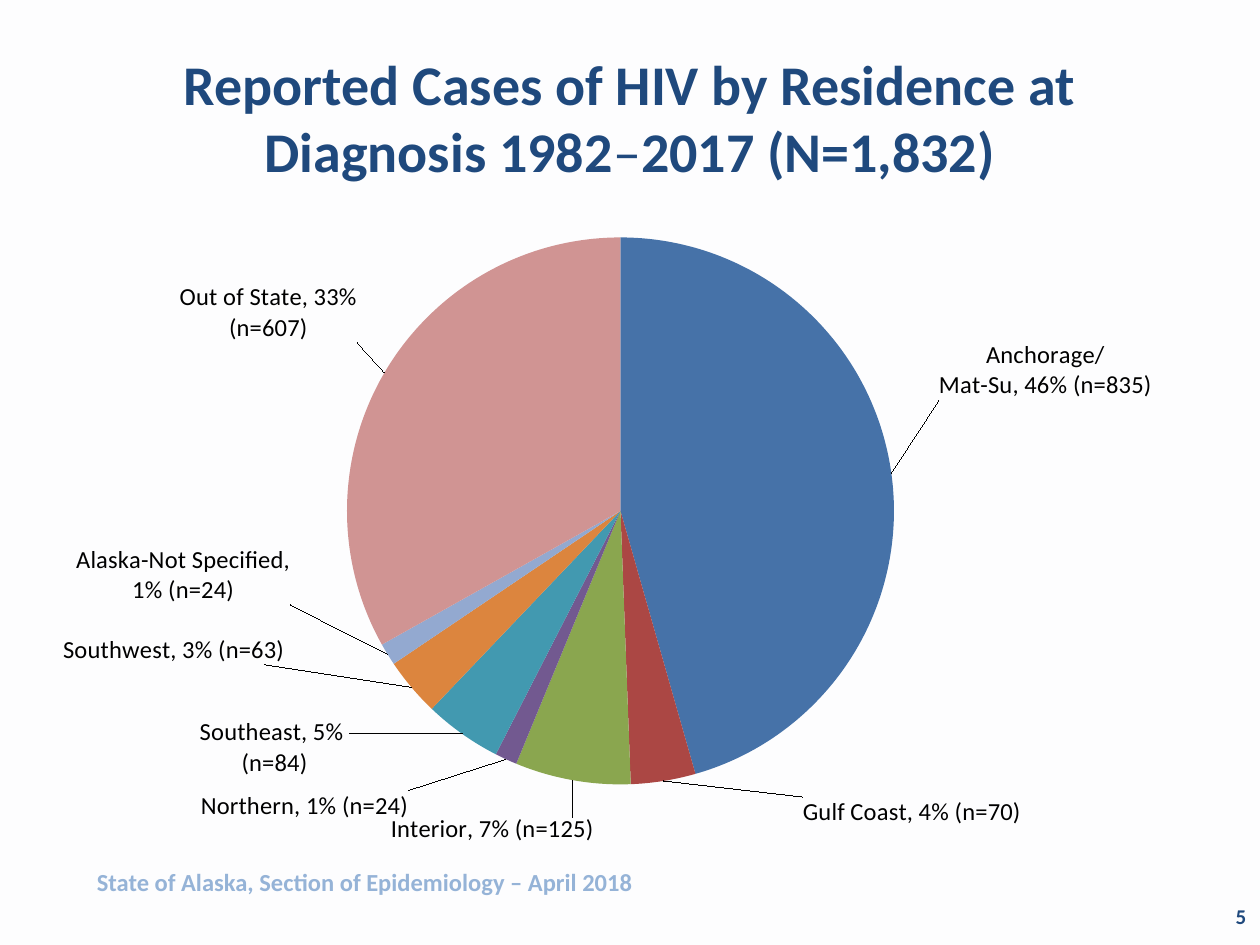
from lxml import etree
from pptx import Presentation
from pptx.chart.data import CategoryChartData
from pptx.dml.color import RGBColor
from pptx.enum.chart import XL_CHART_TYPE, XL_LABEL_POSITION
from pptx.enum.text import MSO_ANCHOR, PP_ALIGN
from pptx.oxml.ns import qn
from pptx.util import Pt

PIE = XL_CHART_TYPE.PIE
OUTSIDE = XL_LABEL_POSITION.OUTSIDE_END
TOP, MIDDLE = MSO_ANCHOR.TOP, MSO_ANCHOR.MIDDLE
LEFT, CENTER, RIGHT = PP_ALIGN.LEFT, PP_ALIGN.CENTER, PP_ALIGN.RIGHT
FONT = "Calibri"
COLORS = {"back": "FDFDFE", "navy": "1F497D", "footer": "95B3D7", "text": "000000"}

REGIONS = [
    ("Anchorage/\nMat-Su", 835, "4672A8", "Anchorage/\nMat-Su, 46% (n=835)", (23, -41)),
    ("Gulf Coast", 70, "AB4744", "Gulf Coast, 4% (n=70)", (79, 5)),
    ("Interior", 125, "8AA64F", "Interior, 7% (n=125)", (13, 17)),
    ("Northern", 24, "725990", "Northern, 1% (n=24)", (-54, 14)),
    ("Southeast", 84, "4299B0", "Southeast, 5% \n(n=84)", (-62, -13)),
    ("Southwest", 63, "DC853E", "Southwest, 3% (n=63)", (-81, -33)),
    ("Alaska-Not Specified", 24, "93A9D0", "Alaska-Not Specified, 1% (n=24)", (-52, -65)),
    ("Out of State", 607, "D09493", "Out of State, 33% (n=607)", (-12, -15)),
]


def rgb(value):
    return RGBColor.from_string(value)


def style_font(font, size, color, bold=False):
    font.name, font.size, font.bold = FONT, Pt(size), bold
    font.color.rgb = rgb(color)


def add_text(slide, box, runs, size, color, align=LEFT, anchor=TOP):
    sp = slide.shapes.add_textbox(*map(Pt, box))
    tf = sp.text_frame
    tf.word_wrap = True
    tf.vertical_anchor = anchor
    p = tf.paragraphs[0]
    p.alignment = align
    for text, bold in runs:
        r = p.add_run()
        r.text = text
        style_font(r.font, size, color, bold)


def set_layout(parent, index, values):
    for old in parent.findall(qn("c:layout")):
        parent.remove(old)
    layout = etree.Element(qn("c:layout"))
    manual = etree.SubElement(layout, qn("c:manualLayout"))
    for tag, value in values.items():
        etree.SubElement(manual, qn(f"c:{tag}")).set("val", str(value))
    parent.insert(index, layout)


def add_label(point, text):
    label = point.data_label
    tf = label.text_frame
    for i, line in enumerate(text.split("\n")):
        p = tf.paragraphs[0] if i == 0 else tf.add_paragraph()
        r = p.add_run()
        r.text = line
        style_font(r.font, 14, COLORS["text"])
    label.position = OUTSIDE


def add_pie(slide, box):
    width, height = box[2:]
    data = CategoryChartData()
    data.categories = [region[0] for region in REGIONS]
    data.add_series("Series 1", [region[1] for region in REGIONS])
    chart = slide.shapes.add_chart(PIE, *map(Pt, box), data).chart
    chart.has_legend = False
    chart.has_title = False
    style_font(chart.font, 18, COLORS["text"])
    plot = chart.plots[0]
    plot.vary_by_categories = True
    series = plot.series[0]

    labels = series.data_labels
    labels.show_category_name = labels.show_value = labels.show_percentage = True
    labels.position = OUTSIDE
    style_font(labels.font, 14, COLORS["text"])
    for i, (_, _, color, text, _) in enumerate(REGIONS):
        point = series.points[i]
        point.format.fill.solid()
        point.format.fill.fore_color.rgb = rgb(color)
        add_label(point, text)

    d_lbls = series._element.find(qn("c:dLbls"))
    for d_lbl, region in zip(d_lbls.findall(qn("c:dLbl")), REGIONS):
        dx, dy = region[4]
        set_layout(d_lbl, 1, {"x": dx / width, "y": dy / height})
    leader = d_lbls.find(qn("c:showLeaderLines"))
    if leader is None:
        leader = etree.SubElement(d_lbls, qn("c:showLeaderLines"))
    leader.set("val", "1")

    diameter = 312.6
    set_layout(plot._element.getparent(), 0, {
        "layoutTarget": "inner", "xMode": "edge", "yMode": "edge",
        "x": 162.3 / width, "y": 9.7 / height,
        "w": diameter / width, "h": diameter / height,
    })


def build_slide(prs):
    s = prs.slides.add_slide(prs.slide_layouts[6])
    s.background.fill.solid()
    s.background.fill.fore_color.rgb = rgb(COLORS["back"])
    title = [("Reported Cases of HIV by Residence at Diagnosis 1982", True),
             ("–", False), ("2017 (N=1,832)", True)]
    add_text(s, (36, 21.6, 648, 90), title, 32, COLORS["navy"], CENTER, MIDDLE)
    add_pie(s, (36, 126, 648, 356.4))
    footer = [("State of Alaska, Section of Epidemiology – April 2018", True)]
    add_text(s, (48.24, 491.76, 504, 24.48), footer, 14, COLORS["footer"])
    add_text(s, (551.52, 509.04, 167.76, 28.8), [("5", True)], 12, COLORS["navy"], RIGHT, MIDDLE)


def main():
    prs = Presentation()
    prs.slide_width, prs.slide_height = Pt(720), Pt(540)
    build_slide(prs)
    prs.save("out.pptx")


if __name__ == "__main__":
    main()
